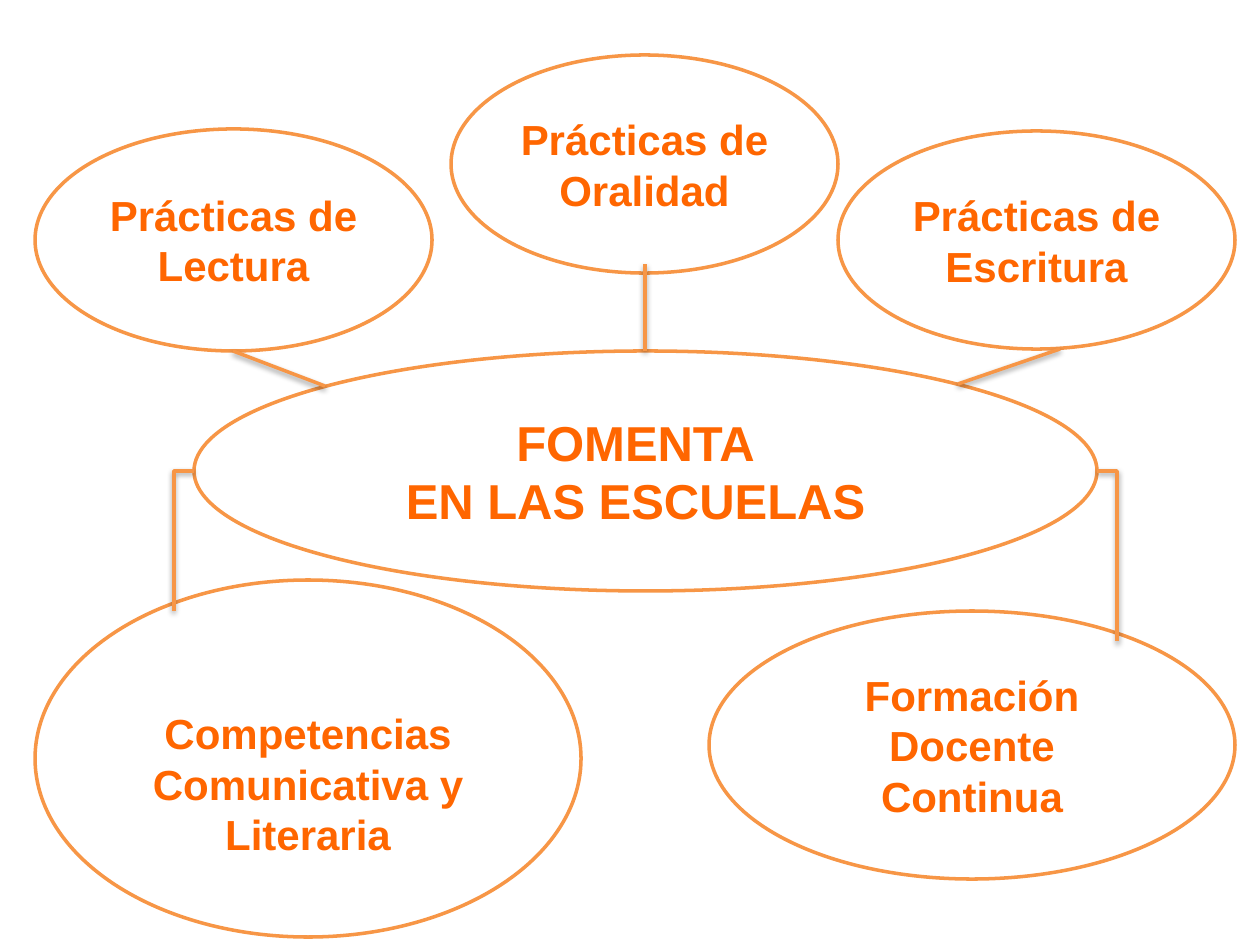
from pptx import Presentation
from pptx import util as u
from pptx.dml.color import RGBColor
from pptx.enum import shapes, text
from pptx.oxml.ns import qn

SCALE = 914400 / 126
COLORS = {"paper": "FFFFFF", "outline": "F79646", "words": "FF6600"}
INSET_X, INSET_Y = 13, 6


def px(length):
    """Turn a length in px into EMU."""
    return u.Emu(round(length * SCALE))


def color(role):
    """Give the colour of a role."""
    return RGBColor.from_string(COLORS[role])


def outline(line):
    """Give a line the common colour and width."""
    line.color.rgb = color("outline")
    line.width = u.Pt(2)


def add_idea(slide, box, wording, size=24, extra_top=0, extra_right=0):
    """Place an ellipse with centred bold wording in the box."""
    idea = slide.shapes.add_shape(shapes.MSO_SHAPE.OVAL, *map(px, box))
    idea.shadow.inherit = False
    idea.fill.solid()
    idea.fill.fore_color.rgb = color("paper")
    outline(idea.line)
    frame = idea.text_frame
    frame.word_wrap = True
    frame.vertical_anchor = text.MSO_ANCHOR.MIDDLE
    frame.margin_left, frame.margin_bottom = px(INSET_X), px(INSET_Y)
    frame.margin_top = px(INSET_Y + extra_top)
    frame.margin_right = px(INSET_X + extra_right)
    frame.text = wording
    for paragraph in frame.paragraphs:
        paragraph.alignment = text.PP_ALIGN.CENTER
        for run in paragraph.runs:
            run.font.name = "Arial"
            run.font.size = u.Pt(size)
            run.font.bold = True
            run.font.color.rgb = color("words")


def add_link(slide, start, end, kind=shapes.MSO_CONNECTOR.STRAIGHT):
    """Join two points with a connector."""
    link = slide.shapes.add_connector(kind, *map(px, start + end))
    outline(link.line)
    return link


def add_corner_link(slide, start, end, turned=False):
    """Join two points with a one-corner connector, turned half round if asked."""
    link = add_link(slide, start, end, shapes.MSO_CONNECTOR.ELBOW)
    properties = link._element.spPr
    properties.find(qn("a:prstGeom")).set("prst", "bentConnector2")
    if turned:
        properties.find(qn("a:xfrm")).set("rot", "10800000")


def add_practices(slide, box):
    """Place the three practices across the box."""
    left, top, width, height = box
    side_width, middle_width = 397, 387
    side_left = left + width - side_width
    add_idea(slide, (left, top + 74, side_width, height - 74), "Prácticas de Lectura")
    add_idea(slide, (side_left, top + 76, side_width, 218), "Prácticas de Escritura")
    add_idea(slide, (side_left - middle_width, top, middle_width, 218),
             "Prácticas de Oralidad")


def add_outcomes(slide, box):
    """Place the competences and the teacher training in the box."""
    left, top, width, height = box
    training_width = 526
    add_idea(slide, (left, top, 546, height),
             "Competencias Comunicativa y Literaria", extra_top=50)
    add_idea(slide, (left + width - training_width, top + 31, training_width, 268),
             "Formación Docente Continua")


def add_links(slide, box):
    """Join the central idea in the box to the ideas around it."""
    left, top, width, height = box
    right, center, middle = left + width, left + width // 2, top + height // 2
    add_link(slide, (center, top), (center, top - 87))
    add_link(slide, (right - 139, top + 33), (right - 37, top - 2))
    add_link(slide, (left + 131, top + 35), (left + 39, top))
    add_corner_link(slide, (left - 20, middle + 140), (left, middle), turned=True)
    add_corner_link(slide, (right, middle), (right + 20, middle + 170))


def main():
    """Build the slide and save it."""
    deck = Presentation()
    deck.slide_width, deck.slide_height = px(1260), px(945)
    slide = deck.slides.add_slide(deck.slide_layouts[6])
    center_box = (194, 351, 903, 240)
    add_idea(slide, center_box, "FOMENTA\nEN LAS ESCUELAS", size=28, extra_right=20)
    add_practices(slide, (35, 55, 1200, 296))
    add_outcomes(slide, (35, 580, 1200, 357))
    add_links(slide, center_box)
    deck.save("out.pptx")


if __name__ == "__main__":
    main()
